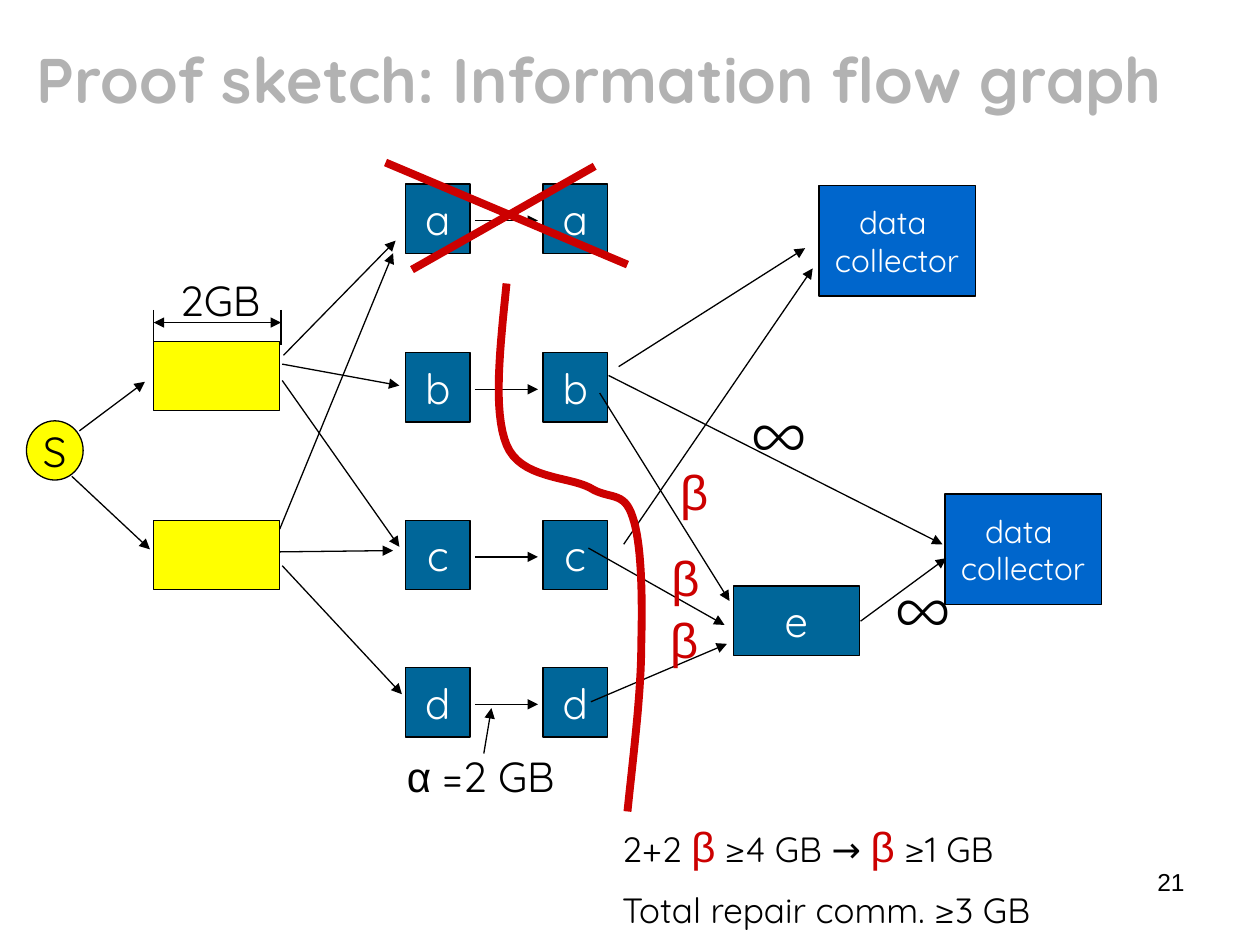
from lxml import etree
from pptx import Presentation
from pptx.dml.color import RGBColor as RGB
from pptx.enum.shapes import MSO_CONNECTOR as Link, MSO_SHAPE as Kind
from pptx.enum.text import MSO_ANCHOR as Anchor, PP_ALIGN as Align
from pptx.oxml.ns import qn
from pptx.util import Inches, Pt

HUES = {"ink": "000000", "white": "FFFFFF", "grey": "B2B2B2", "store": "FFFF00",
        "node": "006699", "sink": "0066CC", "cut": "CC0000"}
SANS, HEAD = "Arial", "Quicksand"


def hue(name):
    return RGB.from_string(HUES[name])


def style(font, size, tint="ink", face=HEAD, bold=False):
    for key, val in {"size": Pt(size), "name": face, "bold": bold}.items():
        setattr(font, key, val)
    font.color.rgb = hue(tint)


def write(frame, paras, align=Align.LEFT, gap=0):
    """Fill a frame; each paragraph is a list of (text, size, tint, face) runs."""
    for i, runs in enumerate(paras):
        para = frame.add_paragraph() if i else frame.paragraphs[0]
        para.alignment = align
        if i and gap:
            para.space_before = Pt(gap)
        for text, *look in runs:
            run = para.add_run()
            run.text = text
            style(run.font, *look)


def label(slide, box, *paras, align=Align.LEFT, gap=0):
    frame = slide.shapes.add_textbox(*map(Inches, box)).text_frame
    frame.word_wrap = True
    write(frame, paras, align, gap)


def block(slide, box, fill, lines=(), size=24, tint="white", kind=Kind.RECTANGLE):
    shape = slide.shapes.add_shape(kind, *map(Inches, box))
    shape.shadow.inherit = False
    shape.fill.solid()
    shape.fill.fore_color.rgb = hue(fill)
    shape.line.color.rgb = hue("ink")
    shape.line.width = Pt(0.75)
    frame = shape.text_frame
    frame.word_wrap = False
    frame.vertical_anchor = Anchor.MIDDLE
    write(frame, [[(line, size, tint)] for line in lines], Align.CENTER)


def line(slide, ends, tips=("tailEnd",), tint="ink", width=0.75):
    link = slide.shapes.add_connector(Link.STRAIGHT, *map(Inches, ends))
    link.line.color.rgb = hue(tint)
    link.line.width = Pt(width)
    for tip in tips:
        etree.SubElement(link.line._get_or_add_ln(), qn("a:" + tip), type="triangle")
    etree.SubElement(link._element.spPr, qn("a:effectLst"))


def title(slide, box, text):
    shape = slide.shapes.title
    for key, val in zip(("left", "top", "width", "height"), box):
        setattr(shape, key, Inches(val))
    shape.text_frame.vertical_anchor = Anchor.MIDDLE
    shape.text_frame.text = text
    para = shape.text_frame.paragraphs[0]
    para.alignment = Align.LEFT
    style(para.runs[0].font, 36, "grey", bold=True)


def source(slide, x, y):
    """Source S, the two stores and the width mark over the upper one."""
    for top in (y, y + 1.42):
        block(slide, (x, top, 1, 0.55), "store")
    block(slide, (x - 1.01, y + 0.63, 0.45, 0.47), "store", ["S"], tint="ink",
          kind=Kind.OVAL)
    line(slide, (x, y - 0.15, x + 1.01, y - 0.15), ("headEnd", "tailEnd"))
    line(slide, (x, y - 0.25, x, y + 0.08), ())
    line(slide, (x + 1.01, y - 0.25, x + 1.01, y + 0.03), ())
    label(slide, (x + 0.11, y - 0.58, 1.18, 0.5), [("2GB", 24)])


def pair(slide, x, y, name):
    """A node split into its in and out halves."""
    for left in (x, x + 1.09):
        block(slide, (left, y, 0.51, 0.55), "node", [name])
    line(slide, (x + 0.55, y + 0.29, x + 1.05, y + 0.29))


def cross(slide, x, y):
    for ends in ((x, y, x + 1.92, y + 0.81), (x + 0.21, y + 0.85, x + 1.66, y + 0.03)):
        line(slide, ends, (), "cut", 4.5)


def bend(start, a, b, end, steps=16):
    """Points along a cubic curve, without its start."""
    for i in range(1, steps + 1):
        t = i / steps
        u = 1 - t
        yield tuple(u**3 * p + 3 * u * u * t * q + 3 * u * t * t * r + t**3 * s
                    for p, q, r, s in zip(start, a, b, end))


def cut(slide, knots):
    dots = [dot for i in range(0, len(knots) - 1, 3) for dot in bend(*knots[i:i + 4])]
    draft = slide.shapes.build_freeform(*map(Inches, knots[0]))
    draft.add_line_segments([tuple(map(Inches, dot)) for dot in dots], close=False)
    shape = draft.convert_to_shape()
    shape.shadow.inherit = False
    shape.fill.background()
    shape.line.color.rgb = hue("cut")
    shape.line.width = Pt(4.5)


FLOWS = [
    (0.63, 3.42, 1.15, 3.03), (0.57, 3.78, 1.19, 4.36),  # S to stores
    (2.25, 2.82, 3.14, 1.91), (2.24, 2.89, 3.17, 3.06), (2.24, 3.02, 3.17, 4.34),
    (2.22, 4.2, 3.12, 2.01), (2.22, 4.38, 3.12, 4.37), (2.24, 4.49, 3.19, 5.51),
    (4.76, 3.12, 5.79, 4.77), (4.67, 4.35, 5.75, 4.96), (4.69, 5.57, 5.77, 5.11),  # to e
    (4.91, 2.91, 6.39, 1.97), (4.95, 4.32, 6.45, 2.13),  # to collectors
    (4.83, 2.98, 7.48, 4.32), (6.83, 4.93, 7.51, 4.43),
    (3.84, 5.98, 3.9, 5.62),  # alpha pointer
]
KNOTS = [(4.02, 2.25), (3.97, 2.75), (3.91, 3.26), (4.02, 3.53), (4.13, 3.8),
         (4.51, 3.78), (4.68, 3.87), (4.84, 3.97), (4.95, 3.89), (5.02, 4.1),
         (5.09, 4.3), (5.1, 4.71), (5.09, 5.1), (5.09, 5.49), (5.03, 5.96), (4.98, 6.44)]


def marks(slide):
    """Edge capacities and the bound that follows from them."""
    label(slide, (3.13, 5.91, 1.69, 0.5), [("α", 24, "ink", SANS), (" =2 GB", 24)])
    for x, y in ((5.87, 3.05), (7.01, 4.44)):
        label(slide, (x, y, 0.76, 0.71), [("∞", 36)])
    for x, y in ((5.3, 3.61), (5.23, 4.3), (5.22, 4.79)):
        label(slide, (x, y, 0.6, 0.57), [("β", 28, "cut", SANS)])
    beta = ("β", 24, "cut", SANS)
    label(slide, (4.84, 6.46, 4.33, 1.01),
          [("2+2 ", 20), beta, (" ≥4 GB → ", 20), beta, (" ≥1 GB", 20)],
          [("Total repair comm. ≥3 GB", 20)], gap=10)


def main():
    deck = Presentation()
    deck.slide_width, deck.slide_height = Inches(10), Inches(7.5)
    slide = deck.slides.add_slide(deck.slide_layouts.get_by_name("Title Only"))
    title(slide, (0.19, 0, 9.53, 1.25), "Proof sketch: Information flow graph")
    source(slide, 1.22, 2.71)
    for name, y in zip("abcd", (1.46, 2.8, 4.13, 5.3)):
        pair(slide, 3.22, y, name)
    cross(slide, 3.06, 1.29)
    block(slide, (5.82, 4.65, 1, 0.55), "node", ["e"])
    for x, y in ((6.5, 1.47), (7.5, 3.92)):
        block(slide, (x, y, 1.24, 0.88), "sink", ["data ", "collector"], 18)
    for ends in FLOWS:
        line(slide, ends)
    marks(slide)
    cut(slide, KNOTS)
    label(slide, (7.17, 6.83, 2.33, 0.52), [("21", 14, "ink", SANS)], align=Align.RIGHT)
    deck.save("out.pptx")


if __name__ == "__main__":
    main()
